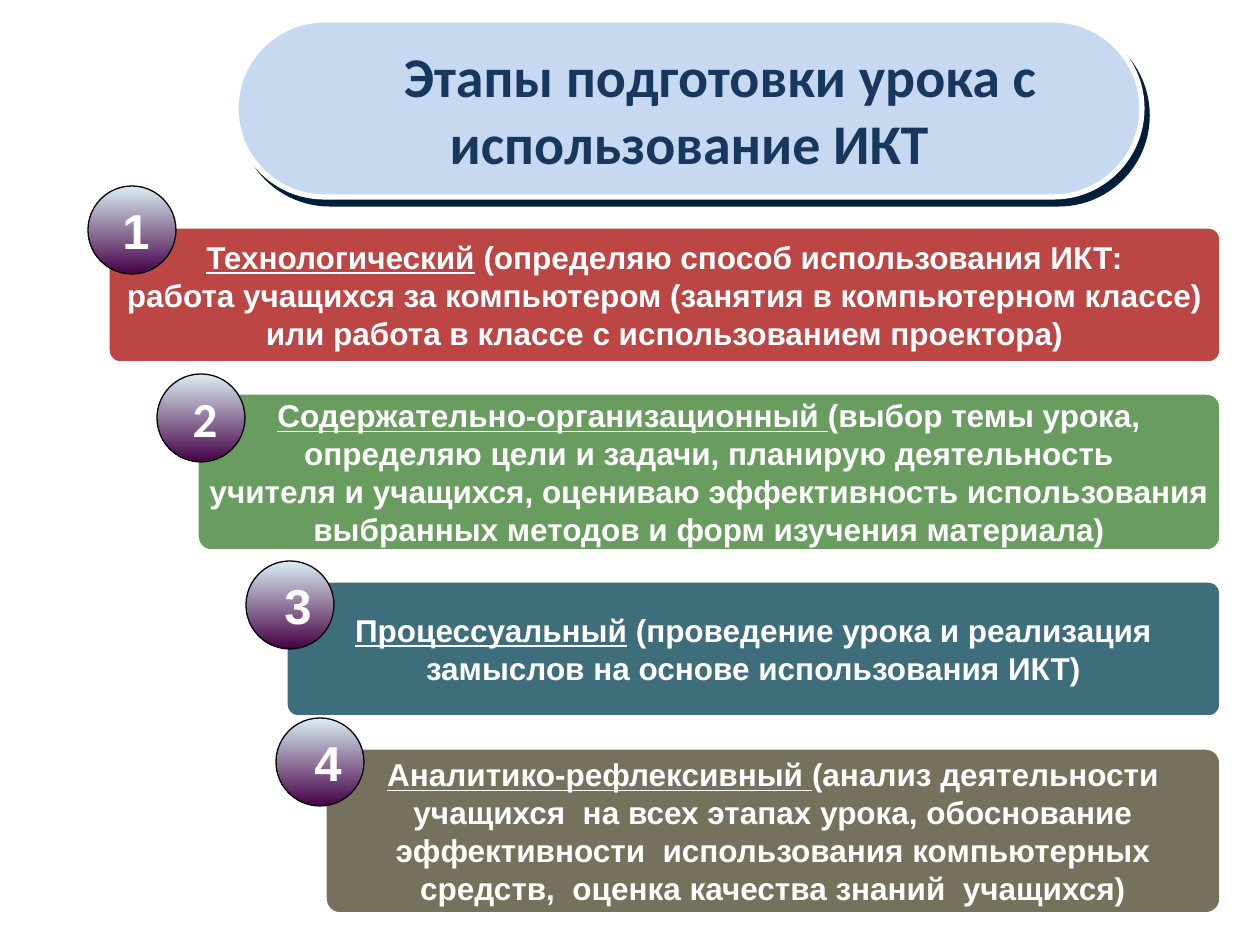
import dataclasses

import lxml.etree
import pptx
import pptx.dml.color
import pptx.enum.shapes
import pptx.enum.text
import pptx.oxml
import pptx.oxml.ns
import pptx.util

EMU_PER_PX = 914400 / 126
SHAPE = pptx.enum.shapes.MSO_SHAPE
CENTER = pptx.enum.text.PP_ALIGN.CENTER
MIDDLE = pptx.enum.text.MSO_ANCHOR.MIDDLE


@dataclasses.dataclass(frozen=True)
class Theme:
    white: str = "FFFFFF"
    black: str = "000000"
    title_fill: str = "C6D9F1"
    title_text: str = "17375E"
    title_shadow: str = "001D3A"
    badge_top: str = "DBEEF4"
    badge_bottom: str = "450045"
    cards: tuple = ("BB4643", "699D5F", "3E6E7B", "75715D")
    title_font: str = "Calibri"
    body_font: str = "Arial"
    title_size: int = 32
    badge_size: int = 28
    body_size: int = 18


THEME = Theme()

STAGES = [
    dict(
        card=(108, 227, 1113, 136), badge=(88, 186), font=THEME.body_font, shift=4,
        heading="Технологический",
        lines=[
            " (определяю способ использования ИКТ:",
            "работа учащихся за компьютером (занятия в компьютерном классе)",
            "или работа в классе с использованием проектора)",
        ],
    ),
    dict(
        card=(197, 393, 1024, 158), badge=(157, 374), font=THEME.title_font, shift=4,
        heading="Содержательно-организационный ",
        lines=[
            "(выбор темы урока,",
            "определяю цели и задачи, планирую деятельность",
            "учителя и учащихся, оцениваю эффективность использования",
            "выбранных методов и форм изучения материала)",
        ],
    ),
    dict(
        card=(286, 581, 935, 136), badge=(246, 561), font=THEME.body_font, shift=8,
        heading="Процессуальный",
        lines=[
            " (проведение урока и реализация",
            "замыслов на основе использования ИКТ)",
        ],
    ),
    dict(
        card=(325, 748, 896, 166), badge=(276, 718), font=THEME.body_font, shift=8,
        heading="Аналитико-рефлексивный ",
        lines=[
            "(анализ деятельности",
            "учащихся  на всех этапах урока, обоснование",
            "эффективности  использования компьютерных",
            "средств,  оценка качества знаний  учащихся)",
        ],
    ),
]


def px(length):
    return pptx.util.Emu(round(length * EMU_PER_PX))


def rgb(value):
    return pptx.dml.color.RGBColor.from_string(value)


def style_para(para, font, size, color):
    para.alignment = CENTER
    para.font.name = font
    para.font.size = pptx.util.Pt(size)
    para.font.bold = True
    para.font.color.rgb = rgb(color)


def add_outlined(page, kind, bounds, line_color, line_width):
    shape = page.shapes.add_shape(kind, *map(px, bounds))
    shape.shadow.inherit = False
    shape.line.color.rgb = rgb(line_color)
    shape.line.width = pptx.util.Pt(line_width)
    shape.text_frame.vertical_anchor = MIDDLE
    return shape


def add_rounded(page, bounds, radius, fill, line_width):
    shape = add_outlined(page, SHAPE.ROUNDED_RECTANGLE, bounds, THEME.white, line_width)
    shape.adjustments[0] = radius
    shape.fill.solid()
    shape.fill.fore_color.rgb = rgb(fill)
    return shape


def add_hard_shadow(shape, color):
    qn = pptx.oxml.ns.qn
    effects = shape.element.spPr.find(qn("a:effectLst"))
    shadow = lxml.etree.SubElement(
        effects, qn("a:outerShdw"),
        blurRad="0", dist=str(pptx.util.Pt(5)), dir=str(53 * 60000),
        algn="ctr", rotWithShape="0",
    )
    lxml.etree.SubElement(shadow, qn("a:srgbClr"), val=color)


def add_title(page, text):
    pill = add_rounded(page, (236, 20, 906, 177), 0.5, THEME.title_fill, 3)
    add_hard_shadow(pill, THEME.title_shadow)
    box = page.shapes.add_textbox(*map(px, (256, 34, 867, 149)))
    frame = box.text_frame
    frame.word_wrap = True
    frame.vertical_anchor = MIDDLE
    para = frame.paragraphs[0]
    para.text = text
    style_para(para, THEME.title_font, THEME.title_size, THEME.title_text)
    properties = para._p.get_or_add_pPr()
    properties.set("marL", "0")
    properties.set("indent", str(px(62)))


def add_card(page, bounds, fill, heading, lines):
    frame = add_rounded(page, bounds, 0.09, fill, 2).text_frame
    frame.word_wrap = False
    for index, line in enumerate(lines):
        para = frame.add_paragraph() if index else frame.paragraphs[0]
        if index == 0:
            span = para.add_run()
            span.text = heading
            span.font.underline = True
        para.add_run().text = line
        style_para(para, THEME.body_font, THEME.body_size, THEME.white)


def add_badge(page, position, number, font, shift):
    badge = add_outlined(page, SHAPE.OVAL, (*position, 88, 88), THEME.black, 0.75)
    badge.fill.gradient()
    badge.fill.gradient_angle = 270
    for stop, color in zip(badge.fill.gradient_stops, (THEME.badge_top, THEME.badge_bottom)):
        stop.color.rgb = rgb(color)
    frame = badge.text_frame
    frame.margin_left = px(2 * shift)
    frame.margin_right = 0
    para = frame.paragraphs[0]
    para.text = str(number)
    style_para(para, font, THEME.badge_size, THEME.white)


def main():
    deck = pptx.Presentation()
    deck.slide_width = px(1260)
    deck.slide_height = px(945)
    page = deck.slides.add_slide(deck.slide_layouts[6])
    add_title(page, "Этапы подготовки урока с использование ИКТ")
    for stage, fill in zip(STAGES, THEME.cards):
        add_card(page, stage["card"], fill, stage["heading"], stage["lines"])
    for number, stage in enumerate(STAGES, start=1):
        add_badge(page, stage["badge"], number, stage["font"], stage["shift"])
    deck.save("out.pptx")


if __name__ == "__main__":
    main()
